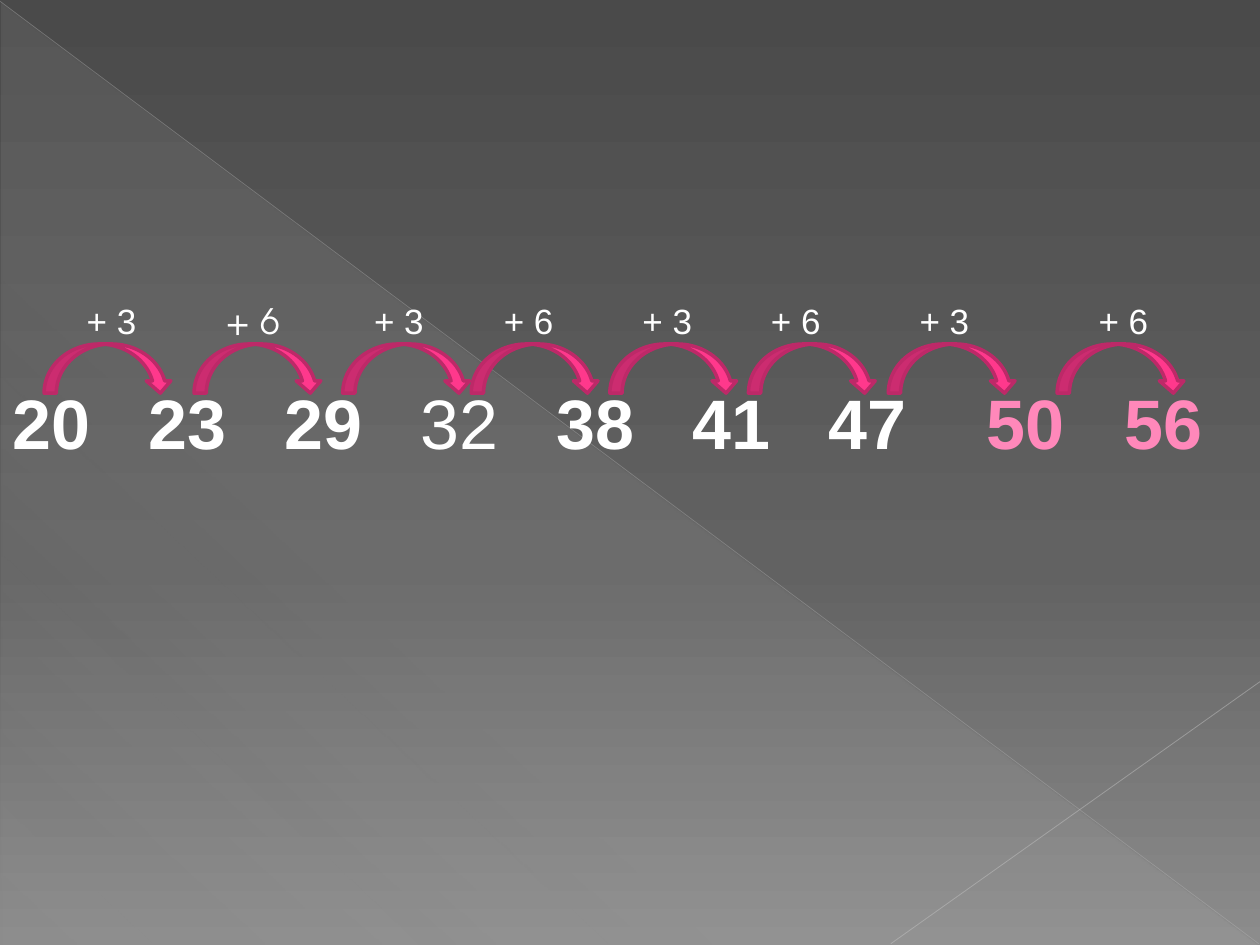
from lxml import etree
from pptx import Presentation
from pptx.dml.color import RGBColor
from pptx.enum.shapes import MSO_CONNECTOR, MSO_SHAPE
from pptx.enum.text import MSO_AUTO_SIZE
from pptx.oxml.ns import qn
from pptx.util import Inches, Pt

STRAIGHT = MSO_CONNECTOR.STRAIGHT
TRIANGLE = MSO_SHAPE.RIGHT_TRIANGLE
CURVED_ARROW = MSO_SHAPE.CURVED_DOWN_ARROW
GROW = MSO_AUTO_SIZE.SHAPE_TO_FIT_TEXT

WHITE = RGBColor(0xFF, 0xFF, 0xFF)
PINK = RGBColor(0xFF, 0x38, 0x8C)
DARK_PINK = RGBColor(0xBD, 0x29, 0x68)
LIGHT_PINK = RGBColor(0xFF, 0x88, 0xBA)
PALE_GRAY = RGBColor(0xD2, 0xD2, 0xD2)
DIAGONAL_GRAY = RGBColor(0xBF, 0xBF, 0xBF)
CORNER_GRAY = RGBColor(0xC6, 0xC6, 0xC6)
BACKGROUND_STOPS = [
    (0, RGBColor(0x4A, 0x4A, 0x4A), 100),
    (60, RGBColor(0x62, 0x62, 0x62), 100),
    (100, RGBColor(0x8C, 0x8C, 0x8C), 100),
]
TRIANGLE_STOPS = [(0, PALE_GRAY, 10), (70, PALE_GRAY, 8), (100, PALE_GRAY, 1)]

FONT = "Arial"
ALTERNATE_FONT = "TeX Gyre Adventor"
NUMBER_PITCH = 1.08
NUMBERS = ["20", "23", "29", "32", "38", "41", "47"]
PLAIN_NUMBER = "32"
ANSWERS = [("50", 6.5), ("56", 7.6)]
STEPS = [
    (0.35, "+ 3", 0.59, 0.63, FONT),
    (1.54, "+ 6", 1.69, 0.71, ALTERNATE_FONT),
    (2.72, "+ 3", 2.87, 0.71, FONT),
    (3.74, "+ 6", 3.9, 0.87, FONT),
    (4.84, "+ 3", 5, 0.87, FONT),
    (5.94, "+ 6", 6.02, 0.87, FONT),
    (7.05, "+ 3", 7.2, 0.94, FONT),
    (8.39, "+ 6", 8.62, 0.79, FONT),
]


def add_alpha(color_element, percent):
    """Set the opacity of a colour element."""
    etree.SubElement(color_element, qn("a:alpha"), val=str(percent * 1000))


def set_gradient(properties, stops, angle):
    """Replace the solid fill in the properties by a linear gradient."""
    gradient = etree.Element(qn("a:gradFill"), rotWithShape="1")
    stop_list = etree.SubElement(gradient, qn("a:gsLst"))
    for position, color, opacity in stops:
        stop = etree.SubElement(stop_list, qn("a:gs"), pos=str(position * 1000))
        color_element = etree.SubElement(stop, qn("a:srgbClr"), val=str(color))
        if opacity < 100:
            add_alpha(color_element, opacity)
    etree.SubElement(gradient, qn("a:lin"), ang=str(angle * 60000), scaled="0")
    properties.replace(properties.find(qn("a:solidFill")), gradient)


def add_background(slide):
    """Paint the slide background and its large translucent triangle."""
    slide.background.fill.solid()
    set_gradient(slide.element.find(".//" + qn("p:bgPr")), BACKGROUND_STOPS, 90)
    triangle = slide.shapes.add_shape(
        TRIANGLE, Inches(0.01), Inches(0.02), Inches(9.98), Inches(7.48))
    triangle.shadow.inherit = False
    triangle.line.fill.background()
    triangle.fill.solid()
    set_gradient(triangle.element.spPr, TRIANGLE_STOPS, 133)


def add_line(slide, start, end, color, width, opacity):
    """Add a thin translucent straight line."""
    points = [Inches(length) for length in (*start, *end)]
    connector = slide.shapes.add_connector(STRAIGHT, *points)
    connector.line.color.rgb = color
    connector.line.width = Pt(width)
    properties = connector.element.spPr
    add_alpha(properties.find(".//" + qn("a:srgbClr")), opacity)
    etree.SubElement(properties, qn("a:effectLst"))


def add_text(slide, left, top, width, height, size, color, font=FONT):
    """Add a text box and return its formatted empty paragraph."""
    box = slide.shapes.add_textbox(
        Inches(left), Inches(top), Inches(width), Inches(height))
    box.text_frame.word_wrap = True
    box.text_frame.auto_size = GROW
    paragraph = box.text_frame.paragraphs[0]
    paragraph.font.name = font
    paragraph.font.size = Pt(size)
    paragraph.font.color.rgb = color
    return paragraph


def add_number_row(slide):
    """Add the known numbers in one line, spaced by tab stops."""
    paragraph = add_text(slide, 0, 2.96, 7.52, 0.77, 40, WHITE)
    tab_list = etree.Element(qn("a:tabLst"))
    for index, number in enumerate(NUMBERS):
        if index:
            position = Inches(NUMBER_PITCH * index)
            etree.SubElement(tab_list, qn("a:tab"), pos=str(position), algn="l")
        run = paragraph.add_run()
        run.text = f"\t{number}" if index else number
        run.font.bold = number != PLAIN_NUMBER
    paragraph._p.get_or_add_pPr().insert(0, tab_list)


def add_answer(slide, number, left):
    """Add one highlighted number, indented in its box."""
    paragraph = add_text(slide, left, 2.96, 2.6, 0.77, 40, LIGHT_PINK)
    paragraph.text = number
    paragraph.font.bold = True
    properties = paragraph._p.get_or_add_pPr()
    properties.set("marL", str(Inches(1.23)))
    properties.set("indent", "0")


def add_arrow(slide, left):
    """Add a curved arrow from one number to the next."""
    arrow = slide.shapes.add_shape(
        CURVED_ARROW, Inches(left), Inches(2.73), Inches(1.02), Inches(0.39))
    arrow.shadow.inherit = False
    arrow.fill.solid()
    arrow.fill.fore_color.rgb = PINK
    arrow.line.color.rgb = DARK_PINK
    arrow.line.width = Pt(2)


def main():
    """Build the number sequence slide."""
    presentation = Presentation()
    presentation.slide_width = Inches(10)
    presentation.slide_height = Inches(7.5)
    slide = presentation.slides.add_slide(presentation.slide_layouts[6])
    add_background(slide)
    add_line(slide, (0, 0.01), (9.99, 7.49), DIAGONAL_GRAY, 0.39, 35)
    add_line(slide, (10, 5.41), (7.07, 7.49), CORNER_GRAY, 0.47, 45)
    add_number_row(slide)
    for number, left in ANSWERS:
        add_answer(slide, number, left)
    for arrow_left, *_ in STEPS:
        add_arrow(slide, arrow_left)
    for _, label, left, width, font in STEPS:
        paragraph = add_text(slide, left, 2.33, width, 0.44, 20, WHITE, font)
        paragraph.text = label
    presentation.save("out.pptx")


if __name__ == "__main__":
    main()
